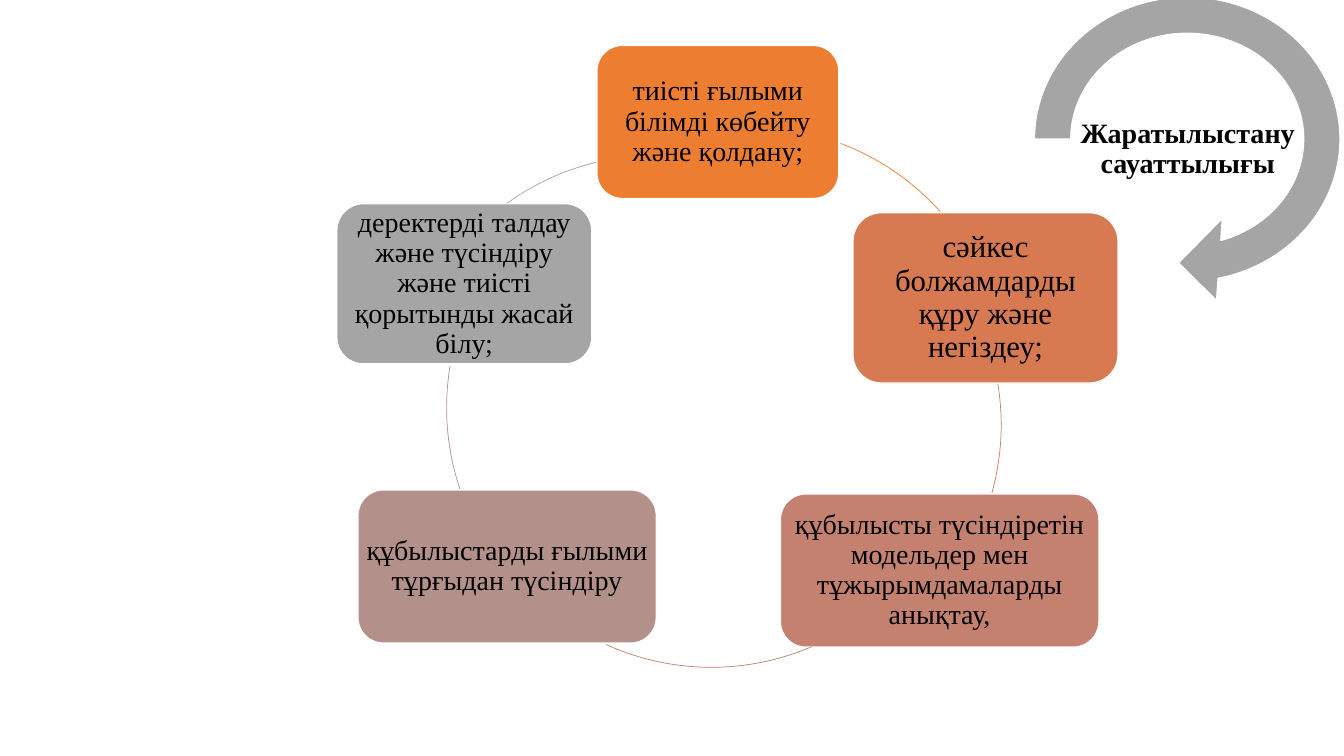
"""Builds a slide with the cycle of science literacy skills."""
from pptx import Presentation
from pptx.dml.color import RGBColor
from pptx.enum.shapes import MSO_SHAPE as Shape
from pptx.enum.text import MSO_ANCHOR as Anchor, PP_ALIGN as Align
from pptx.util import Inches, Pt

FONT = "Times New Roman"
BLACK, WHITE, GRAY = "000000", "FFFFFF", "A5A5A5"
CIRCLE = 5.05
DEGREE = 0.6

TITLE = "Жаратылыстану сауаттылығы"
TITLE_BOX = (10.54, 1.01, 2.48, 0.95)
ARROW_BOX = (10.03, -0.26, 3.49, 3.28)
ARROW_SHAPE = (0.11, 11.42, 45, 108, 0.125)

# text, box, colour, size, corner of the arc's circle, start and end angle
SKILLS = [
    ("тиісті ғылыми білімді көбейту және қолдану;",
     (5.92, 0.45, 2.4, 1.52), "ED7D31", 20, (4.92, 1.26), (290.7, 318.2)),
    ("сәйкес болжамдарды құру және негіздеу;",
     (8.46, 2.11, 2.63, 1.69), "D87A51", 22, (4.88, 1.69), (350.8, 15.5)),
    ("құбылысты түсіндіретін модельдер мен тұжырымдамаларды анықтау,",
     (7.74, 4.9, 3.16, 1.52), "C48170", 20, (4.53, 1.57), (66.8, 114.4)),
    ("құбылыстарды ғылыми тұрғыдан түсіндіру",
     (3.55, 4.86, 2.96, 1.52), "B4908B", 20, (4.43, 1.52), (161.4, 189.4)),
    ("деректерді талдау және түсіндіру және тиісті қорытынды жасай білу;",
     (3.34, 2.02, 2.53, 1.59), GRAY, 20, (3.98, 1.54), (234.2, 256.4)),
]


def rgb(colour):
    return RGBColor.from_string(colour)


def add_preset(slide, kind, box, fill, line, width, adjustments=()):
    preset = slide.shapes.add_shape(kind, *map(Inches, box))
    preset.shadow.inherit = False
    if fill:
        preset.fill.solid()
        preset.fill.fore_color.rgb = rgb(fill)
    else:
        preset.fill.background()
    preset.line.color.rgb = rgb(line)
    preset.line.width = Pt(width)
    for index, value in enumerate(adjustments):
        preset.adjustments[index] = value
    return preset


def write(holder, text, size, inset, bold=False):
    frame = holder.text_frame
    frame.word_wrap = True
    frame.vertical_anchor = Anchor.MIDDLE
    frame.margin_left = frame.margin_right = Inches(inset)
    frame.margin_top = frame.margin_bottom = Inches(inset)
    paragraph = frame.paragraphs[0]
    paragraph.text = text
    paragraph.alignment = Align.CENTER
    paragraph.line_spacing = 0.9
    font = paragraph.font
    font.name, font.size, font.bold = FONT, Pt(size), bold
    font.color.rgb = rgb(BLACK)


def main():
    deck = Presentation()
    deck.slide_width, deck.slide_height = Inches(13.33), Inches(7.5)
    slide = deck.slides.add_slide(deck.slide_layouts[6])

    for text, box, colour, size, corner, angles in SKILLS:
        skill = add_preset(slide, Shape.ROUNDED_RECTANGLE, box, colour, WHITE, 1)
        write(skill, text, size, 0)
        add_preset(slide, Shape.ARC, (*corner, CIRCLE, CIRCLE), None, colour, 0.5,
                   [angle * DEGREE for angle in angles])

    add_preset(slide, Shape.CIRCULAR_ARROW, ARROW_BOX, GRAY, WHITE, 1, ARROW_SHAPE)
    title = slide.shapes.add_textbox(*map(Inches, TITLE_BOX))
    write(title, TITLE, 20, 0.01, bold=True)
    deck.save("out.pptx")


if __name__ == "__main__":
    main()
